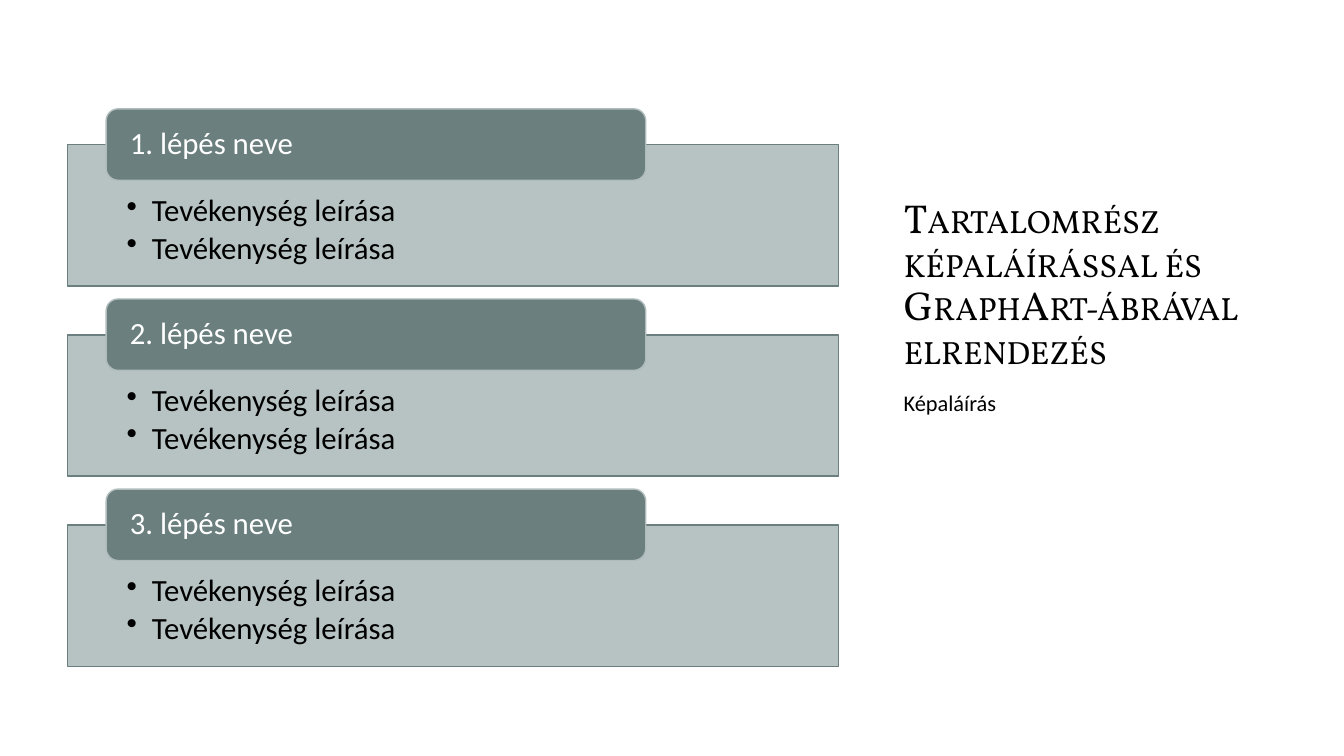
import pptx
import pptx.util
import pptx.dml.color
import pptx.enum.shapes
import pptx.enum.text
import pptx.oxml.ns
from lxml import etree

COLORS = {"sage": "6B7F7F", "mist": "B0BCBC", "black": "000000", "white": "FFFFFF"}
COLUMNS = ROWS = 20
STEP_PITCH = 5.03
FIRST_STEP_ROW = 2.88
STEPS = [
    (f"{number}. lépés neve", ["Tevékenység leírása"] * 2) for number in (1, 2, 3)
]


def rgb(name):
    return pptx.dml.color.RGBColor.from_string(COLORS[name])


class StepSlide:
    """Places elements on the slide by columns and rows of a 20 by 20 grid."""

    body_font = "Calibri"
    title_font = "Vollkorn"

    def __init__(self, presentation):
        self.column = presentation.slide_width / COLUMNS
        self.row = presentation.slide_height / ROWS
        self.slide = presentation.slides.add_slide(presentation.slide_layouts[5])

    def place(self, column, row, width, height):
        return [
            round(column * self.column), round(row * self.row),
            round(width * self.column), round(height * self.row),
        ]

    def set_text(self, shape, lines, size, color, font=body_font, anchor="TOP",
                 insets=(0.1, 0.05, 0.1, 0.05), bullets=False):
        """Fill a shape with left-aligned paragraphs; insets are in inches."""
        frame = shape.text_frame
        frame.word_wrap = True
        frame.auto_size = pptx.enum.text.MSO_AUTO_SIZE.NONE
        frame.vertical_anchor = pptx.enum.text.MSO_ANCHOR[anchor]
        (frame.margin_left, frame.margin_top,
         frame.margin_right, frame.margin_bottom) = map(pptx.util.Inches, insets)
        frame.text = "\n".join(lines)
        for paragraph in frame.paragraphs:
            paragraph.alignment = pptx.enum.text.PP_ALIGN.LEFT
            paragraph.line_spacing = 0.9
            if bullets:
                self.add_bullet(paragraph)
            paragraph.font.name = font
            paragraph.font.size = pptx.util.Pt(size)
            paragraph.font.color.rgb = rgb(color)

    def add_bullet(self, paragraph):
        paragraph.space_after = pptx.util.Pt(3)
        properties = paragraph._p.get_or_add_pPr()
        indent = pptx.util.Inches(0.25)
        properties.set("marL", str(indent))
        properties.set("indent", str(-indent))
        bullet = etree.SubElement(properties, pptx.oxml.ns.qn("a:buChar"))
        bullet.set("char", "•")

    def title(self, text, *area):
        shape = self.slide.shapes.title
        shape.left, shape.top, shape.width, shape.height = self.place(*area)
        self.set_text(shape, [text], 28.8, "black", self.title_font, "BOTTOM")
        run = shape.text_frame.paragraphs[0].runs[0]
        run._r.get_or_add_rPr().set("cap", "small")

    def caption(self, text, *area):
        shape = self.slide.shapes.add_textbox(*self.place(*area))
        self.set_text(shape, [text], 16, "black")

    def block(self, kind, fill, line, *area):
        preset = pptx.enum.shapes.MSO_SHAPE[kind]
        shape = self.slide.shapes.add_shape(preset, *self.place(*area))
        shape.shadow.inherit = False
        shape.fill.solid()
        shape.fill.fore_color.rgb = rgb(fill)
        shape.line.color.rgb = rgb(line)
        shape.line.width = pptx.util.Pt(1)
        return shape

    def step(self, row, name, activities):
        panel = self.block("RECTANGLE", "mist", "sage", 1, row + 0.95, 11.48, 3.74)
        color = panel.fill._xPr.find(".//" + pptx.oxml.ns.qn("a:srgbClr"))
        etree.SubElement(color, pptx.oxml.ns.qn("a:alpha")).set("val", "90000")
        self.set_text(panel, activities, 22, "black",
                      insets=(0.59, 0.5, 0.59, 0.17), bullets=True)
        header = self.block("ROUNDED_RECTANGLE", "sage", "mist", 1.58, row, 8.03, 1.89)
        self.set_text(header, [name], 22, "white", anchor="MIDDLE",
                      insets=(0.2, 0, 0.2, 0))


def main():
    presentation = pptx.Presentation()
    presentation.slide_width = pptx.util.Inches(13.33)
    presentation.slide_height = pptx.util.Inches(7.5)
    page = StepSlide(presentation)
    page.title("Tartalomrész képaláírással és GraphArt-ábrával elrendezés",
               13.3, 3.33, 5.7, 6.67)
    for index, (name, activities) in enumerate(STEPS):
        page.step(FIRST_STEP_ROW + index * STEP_PITCH, name, activities)
    page.caption("Képaláírás", 13.3, 10.24, 5.7, 6.13)
    presentation.save("out.pptx")


if __name__ == "__main__":
    main()
